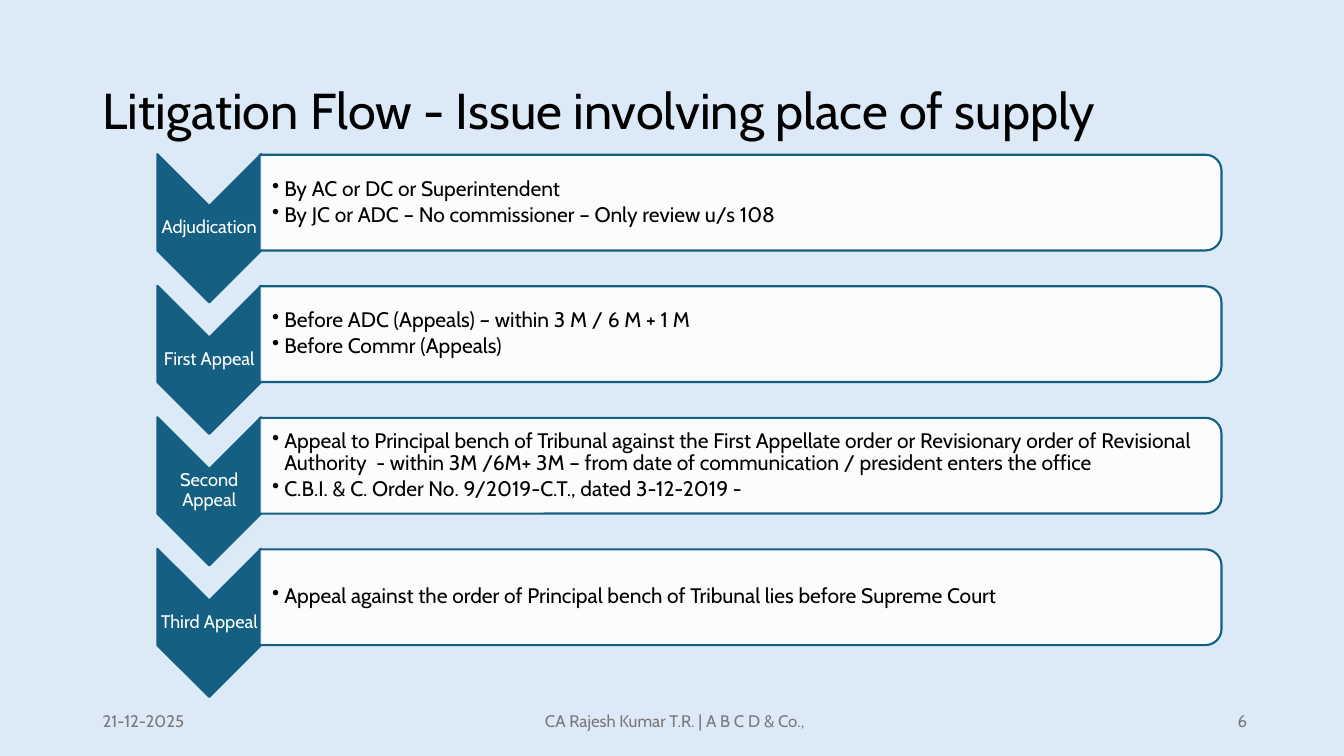
"""Build the litigation flow slide with four appeal stages."""
from lxml import etree
from pptx import Presentation, util as u
from pptx.dml import color
from pptx.enum import shapes, text
from pptx.oxml import ns

COLORS = {"background": "DCEAF7", "stage": "156082", "panel": "FFFFFF",
          "body": "000000", "label": "FFFFFF", "footer": "797979"}
ALIGN = text.PP_ALIGN
STAGE_STEP = 1.305
STAGES = [
    ("Adjudication", ["By AC or DC or Superintendent",
                      "By JC or ADC – No commissioner – Only review u/s 108"]),
    ("First Appeal", ["Before ADC (Appeals) – within 3 M / 6 M + 1 M",
                      "Before Commr (Appeals)"]),
    ("Second Appeal", ["Appeal to Principal bench of Tribunal against the First Appellate order "
                       "or Revisionary order of Revisional Authority  - within 3M /6M+ 3M – "
                       "from date of communication / president enters the office",
                       "C.B.I. & C. Order No. 9/2019-C.T., dated 3-12-2019 -"]),
    ("Third Appeal", ["Appeal against the order of Principal bench of Tribunal lies before Supreme Court"]),
]
FOOTERS = [(0.92, 3, "21-12-2025", ALIGN.LEFT),
           (4.42, 4.5, "CA Rajesh Kumar T.R. | A B C D & Co.,", ALIGN.CENTER),
           (9.42, 3, "6", ALIGN.RIGHT)]

presentation = Presentation()
presentation.slide_width, presentation.slide_height = u.Inches(13.33), u.Inches(7.5)
slide = presentation.slides.add_slide(presentation.slide_layouts[6])
slide.background.fill.solid()
slide.background.fill.fore_color.rgb = color.RGBColor.from_string(COLORS["background"])


def add_text(box, lines, size, ink, align=ALIGN.LEFT, spacing=0.9, insets=(0.1, 0.05), bullet=False):
    """Add a middle-anchored text box; insets are left, then the other sides."""
    frame = slide.shapes.add_textbox(*map(u.Inches, box)).text_frame
    frame.word_wrap = True
    frame.vertical_anchor = text.MSO_ANCHOR.MIDDLE
    frame.margin_left = u.Inches(insets[0])
    frame.margin_right = frame.margin_top = frame.margin_bottom = u.Inches(insets[1])
    for index, line in enumerate(lines):
        paragraph = frame.add_paragraph() if index else frame.paragraphs[0]
        paragraph.alignment = align
        paragraph.line_spacing = spacing
        if bullet:
            paragraph.space_after = u.Pt(size * 0.15)
            properties = paragraph._p.get_or_add_pPr()
            properties.set("marL", str(u.Inches(0.12)))
            properties.set("indent", str(u.Inches(-0.12)))
            etree.SubElement(properties, ns.qn("a:buChar"), char="•")
        run = paragraph.add_run()
        run.text = line
        run.font.name = "Cabin"
        run.font.size = u.Pt(size)
        run.font.color.rgb = color.RGBColor.from_string(COLORS[ink])


def add_turned_shape(kind, box, fill):
    """Add an outlined shape turned a quarter clockwise."""
    shape = slide.shapes.add_shape(kind, *map(u.Inches, box))
    shape.rotation = 90
    shape.shadow.inherit = False
    shape.fill.solid()
    shape.fill.fore_color.rgb = color.RGBColor.from_string(COLORS[fill])
    shape.line.color.rgb = color.RGBColor.from_string(COLORS["stage"])
    shape.line.width = u.Pt(1.5)
    return shape


add_text((0.92, 0.4, 11.5, 1.45), ["Litigation Flow - Issue involving place of supply"], 36, "body")
for left, width, words, align in FOOTERS:
    add_text((left, 6.95, width, 0.4), [words], 12, "footer", align, spacing=1)

for index, (stage, points) in enumerate(STAGES):
    offset = index * STAGE_STEP
    add_turned_shape(shapes.MSO_SHAPE.CHEVRON, (1.34, 1.75 + offset, 1.47, 1.03), "stage")
    add_text((1.56, 2.04 + offset, 1.03, 0.44), [stage], 13, "label", ALIGN.CENTER, insets=(0.01, 0.01))
    panel = add_turned_shape(shapes.MSO_SHAPE.ROUND_2_SAME_RECTANGLE,
                             (6.87, -2.76 + offset, 0.95, 9.54), "panel")
    panel_color = panel._element.spPr.find(ns.qn("a:solidFill"))[0]
    etree.SubElement(panel_color, ns.qn("a:alpha"), val="90000")
    add_text((2.58, 1.58 + offset, 9.49, 0.86), points, 15, "body", insets=(0.12, 0.01), bullet=True)

presentation.save("out.pptx")
